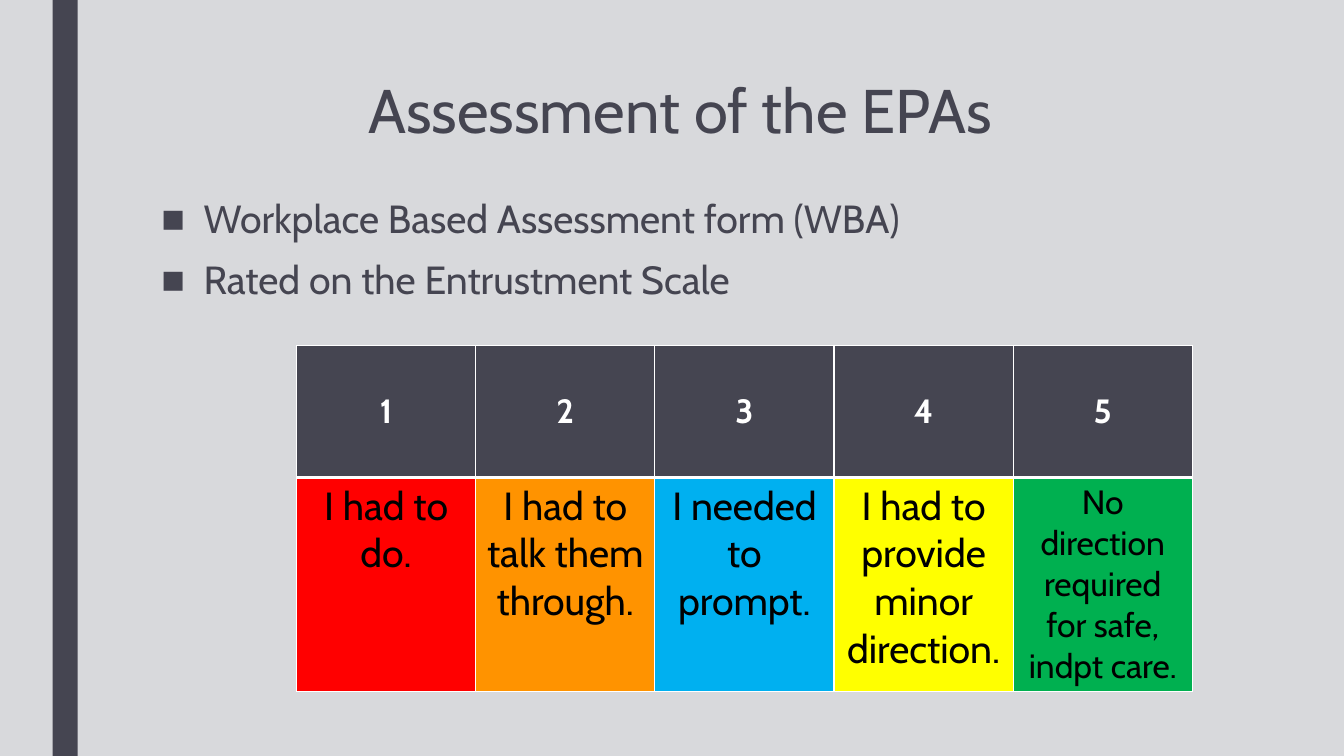
"""Build the slide on the assessment of the EPAs."""
import pptx
import pptx.dml.color
import pptx.enum.shapes
import pptx.enum.text
import pptx.oxml
import pptx.oxml.ns
import pptx.util

Pt = pptx.util.Pt
ALIGN = pptx.enum.text.PP_ALIGN
ANCHOR = pptx.enum.text.MSO_ANCHOR
FONT = "Cabin"
COLORS = {
    "background": "D8D9DC",
    "slate": "454551",
    "white": "FFFFFF",
    "black": "000000",
    "red": "FF0000",
    "orange": "FF9300",
    "blue": "00B0F0",
    "yellow": "FFFF00",
    "green": "00B050",
}
TITLE = "Assessment of the EPAs"
BULLETS = ["Workplace Based Assessment form (WBA)", "Rated on the Entrustment Scale"]
RATINGS = [
    ("I had to do.", "red", 28),
    ("I had to talk them through.", "orange", 28),
    ("I needed to prompt.", "blue", 28),
    ("I had to provide minor direction.", "yellow", 28),
    ("No direction required for safe, indpt care.", "green", 24),
]


def rgb(name):
    return pptx.dml.color.RGBColor.from_string(COLORS[name])


def paint(fill, color):
    fill.solid()
    fill.fore_color.rgb = rgb(color)


def format_runs(para, size, color, bold=False):
    for span in para.runs:
        span.font.name = FONT
        span.font.size = Pt(size)
        span.font.bold = bold
        span.font.color.rgb = rgb(color)


def place(box, left, top, width, height):
    box.left, box.top, box.width, box.height = map(Pt, (left, top, width, height))
    box.text_frame.auto_size = pptx.enum.text.MSO_AUTO_SIZE.NONE
    box.text_frame.vertical_anchor = ANCHOR.TOP


def add_bar(page):
    bar = page.shapes.add_shape(
        pptx.enum.shapes.MSO_SHAPE.RECTANGLE, Pt(37.5), 0, Pt(18), Pt(540))
    bar.shadow.inherit = False
    paint(bar.fill, "slate")
    bar.line.fill.background()


def fill_title(box):
    place(box, 108, 54, 756, 116.5)
    box.text_frame.text = TITLE
    para = box.text_frame.paragraphs[0]
    para.alignment = ALIGN.CENTER
    para.line_spacing = 0.89
    format_runs(para, 44, "slate")


def add_bullet(para):
    properties = para._p.get_or_add_pPr()
    properties.set("marL", str(Pt(30.25)))
    properties.set("indent", str(Pt(-30.25)))
    properties.append(pptx.oxml.parse_xml(
        f'<a:buChar {pptx.oxml.ns.nsdecls("a")} char="■"/>'))


def fill_list(box):
    place(box, 108, 138, 756, 282)
    box.text_frame.text = "\n".join(BULLETS)
    for index, para in enumerate(box.text_frame.paragraphs):
        add_bullet(para)
        para.line_spacing = 0.94
        para.space_before = Pt(10 if index else 0)
        para.space_after = Pt(2)
        format_runs(para, 28, "slate")


def add_borders(cell, top, bottom):
    properties = cell._tc.get_or_add_tcPr()
    for side, width in (("L", 1), ("R", 1), ("T", top), ("B", bottom)):
        properties.append(pptx.oxml.parse_xml(
            f'<a:ln{side} {pptx.oxml.ns.nsdecls("a")} w="{Pt(width)}"><a:solidFill>'
            f'<a:srgbClr val="{COLORS["white"]}"/></a:solidFill></a:ln{side}>'))


def fill_cell(cell, text, size, color, background, bold, anchor):
    paint(cell.fill, background)
    cell.vertical_anchor = anchor
    cell.text_frame.text = text
    para = cell.text_frame.paragraphs[0]
    para.alignment = ALIGN.CENTER
    format_runs(para, size, color, bold)


def add_scale(page):
    frame = page.shapes.add_table(
        2, len(RATINGS), Pt(211.75), Pt(247), Pt(640), Pt(247))
    table = frame.table
    for row, height in zip(table.rows, (94, 153)):
        row.height = Pt(height)
    for index, (text, background, size) in enumerate(RATINGS):
        table.columns[index].width = Pt(128)
        header, rating = table.cell(0, index), table.cell(1, index)
        add_borders(header, 1, 3)
        add_borders(rating, 3, 1)
        fill_cell(header, str(index + 1), 24, "white", "slate", True, ANCHOR.MIDDLE)
        fill_cell(rating, text, size, "black", background, False, ANCHOR.TOP)


def main():
    deck = pptx.Presentation()
    deck.slide_width, deck.slide_height = Pt(960), Pt(540)
    page = deck.slides.add_slide(deck.slide_layouts[1])
    paint(page.background.fill, "background")
    add_bar(page)
    fill_title(page.shapes.title)
    fill_list(page.placeholders[1])
    add_scale(page)
    deck.save("out.pptx")


if __name__ == "__main__":
    main()
